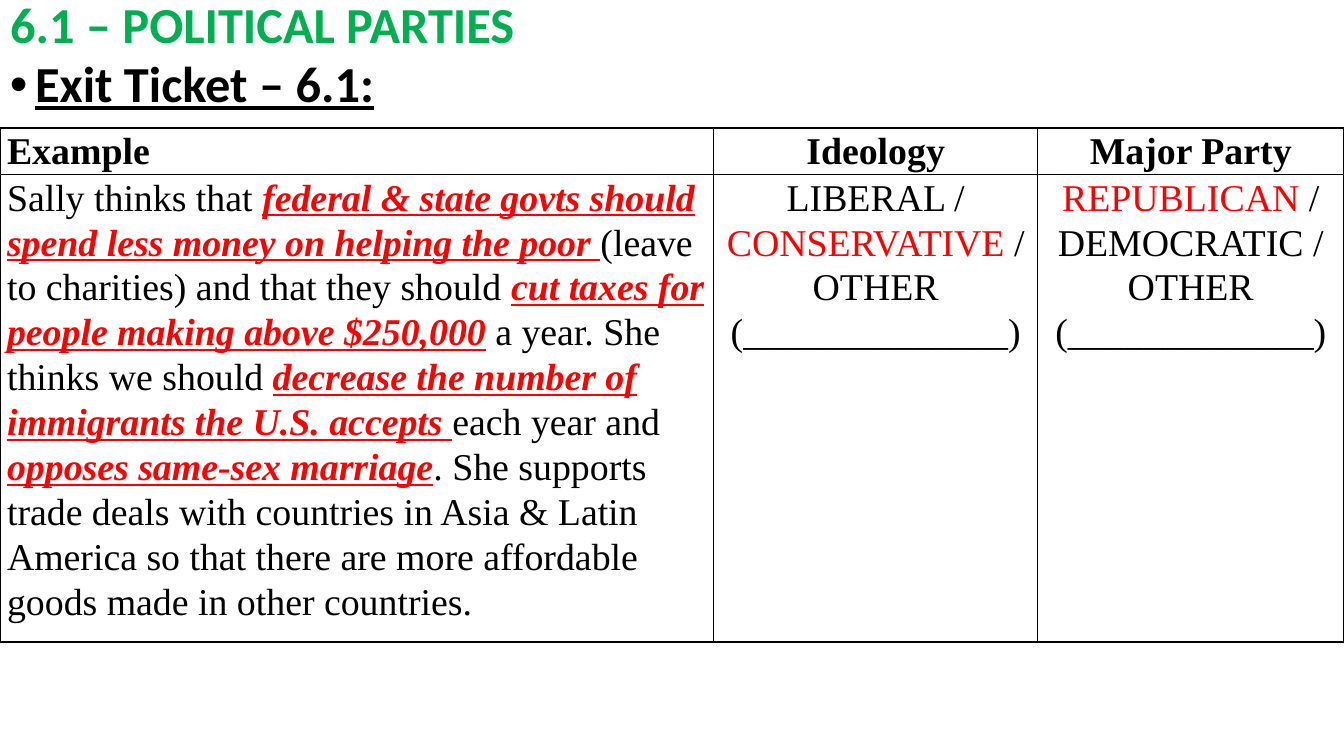
from dataclasses import dataclass

from pptx import Presentation
from pptx import util as u
from pptx.dml.color import RGBColor
from pptx.enum import text
from pptx.oxml import parse_xml
from pptx.oxml.ns import nsdecls


@dataclass(frozen=True)
class Theme:
    heading_font: str = "Calibri"
    table_font: str = "Times New Roman"
    heading_size: int = 36
    table_size: int = 27
    green: str = "00B050"
    black: str = "000000"
    red: str = "FF0000"
    border: float = 1


LEFT, CENTER = text.PP_ALIGN.LEFT, text.PP_ALIGN.CENTER
MIDDLE, TOP = text.MSO_ANCHOR.MIDDLE, text.MSO_ANCHOR.TOP


class SlideBuilder:
    def __init__(self, slide, theme):
        self.s, self.theme = slide, theme

    def apply(self, target, values):
        for name, value in values.items():
            setattr(target, name, value)

    def run(self, p, words, font, size, color, **style):
        r = p.add_run()
        r.text = words
        self.apply(r.font, {"name": font, "size": u.Pt(size), **style})
        r.font.color.rgb = RGBColor.from_string(color)

    def heading(self, sp, box, words, color, anchor, **style):
        for name, value in zip(("left", "top", "width", "height"), box):
            setattr(sp, name, u.Inches(value))
        tf = sp.text_frame
        self.apply(tf, {"word_wrap": True, "vertical_anchor": anchor,
                        "auto_size": text.MSO_AUTO_SIZE.NONE})
        p = tf.paragraphs[0]
        self.apply(p, {"alignment": LEFT, "line_spacing": 0.9})
        self.run(p, words, self.theme.heading_font, self.theme.heading_size,
                 color, bold=True, **style)
        return p

    def title(self, box, words):
        self.heading(self.s.shapes.title, box, words, self.theme.green, MIDDLE)

    def bullet(self, box, words):
        sp = self.s.shapes.add_textbox(0, 0, 0, 0)
        p = self.heading(sp, box, words, self.theme.black, TOP, underline=True)
        p.space_before = u.Pt(10)
        pPr = p._p.get_or_add_pPr()
        pPr.set("marL", str(u.Inches(0.25)))
        pPr.set("indent", str(u.Inches(-0.25)))
        for tag in ('buFont {} typeface="Arial"', 'buChar {} char="•"'):
            pPr.append(parse_xml(f"<a:{tag.format(nsdecls('a'))}/>"))

    def borders(self, cell):
        tcPr = cell._tc.get_or_add_tcPr()
        for i, side in enumerate(("lnL", "lnR", "lnT", "lnB")):
            tcPr.insert(i, parse_xml(
                f'<a:{side} {nsdecls("a")} w="{u.Pt(self.theme.border)}"><a:solidFill>'
                f'<a:srgbClr val="{self.theme.black}"/></a:solidFill></a:{side}>'))

    def cell(self, cell, runs, align):
        self.apply(cell, {"margin_left": u.Inches(0.07), "margin_right": u.Inches(0.07),
                          "margin_top": 0, "margin_bottom": 0, "vertical_anchor": TOP})
        cell.fill.background()
        self.borders(cell)
        p = cell.text_frame.paragraphs[0]
        self.apply(p, {"alignment": align, "line_spacing": 1.07})
        for words, color, style in runs:
            self.run(p, words, self.theme.table_font, self.theme.table_size, color, **style)

    def table(self, left, top, widths, heights, rows):
        frame = self.s.shapes.add_table(
            len(heights), len(widths), u.Inches(left), u.Inches(top),
            u.Inches(sum(widths)), u.Inches(sum(heights)))
        table = frame.table
        self.apply(table, {"first_row": False, "horz_banding": False})
        for column, width in zip(table.columns, widths):
            column.width = u.Inches(width)
        for row, height, contents in zip(table.rows, heights, rows):
            row.height = u.Inches(height)
            for i, (cell, runs) in enumerate(zip(row.cells, contents)):
                self.cell(cell, runs, CENTER if i else LEFT)


def main():
    theme = Theme()
    prs = Presentation()
    prs.slide_width, prs.slide_height = u.Inches(13.33), u.Inches(7.5)
    s = prs.slides.add_slide(prs.slide_layouts[5])
    builder = SlideBuilder(s, theme)

    # Run styles
    def head(words):
        return [(words, theme.black, {"bold": True})]

    def plain(words):
        return words, theme.black, {"bold": False}

    def answer(words):
        return words, theme.red, {"bold": False}

    def clue(words):
        return words, theme.red, {"bold": True, "italic": True, "underline": True}

    # Headings
    builder.title((0, 0, 13.33, 0.54), "6.1 – POLITICAL PARTIES")
    builder.bullet((0, 0.54, 13.33, 0.8), "Exit Ticket – 6.1:")

    # Exit ticket table
    example = [
        plain("Sally thinks that "),
        clue("federal & state govts should spend less money on helping the poor "),
        plain("(leave to charities) and that they should "),
        clue("cut taxes for people making above $250,000"),
        plain(" a year. She thinks we should "),
        clue("decrease the number of immigrants the U.S. accepts "),
        plain("each year and "),
        clue("opposes same-sex marriage"),
        plain(". She supports trade deals with countries in Asia & Latin America "
              "so that there are more affordable goods made in other countries."),
    ]
    ideology = [plain("LIBERAL / "), answer("CONSERVATIVE"),
                plain(" / OTHER (______________)")]
    party = [answer("REPUBLICAN"), plain(" / DEMOCRATIC / OTHER (_____________)")]
    builder.table(0, 1.27, (7.08, 3.21, 3.04), (0.46, 4.64), [
        [head("Example"), head("Ideology"), head("Major Party")],
        [example, ideology, party],
    ])

    prs.save("out.pptx")


if __name__ == "__main__":
    main()
